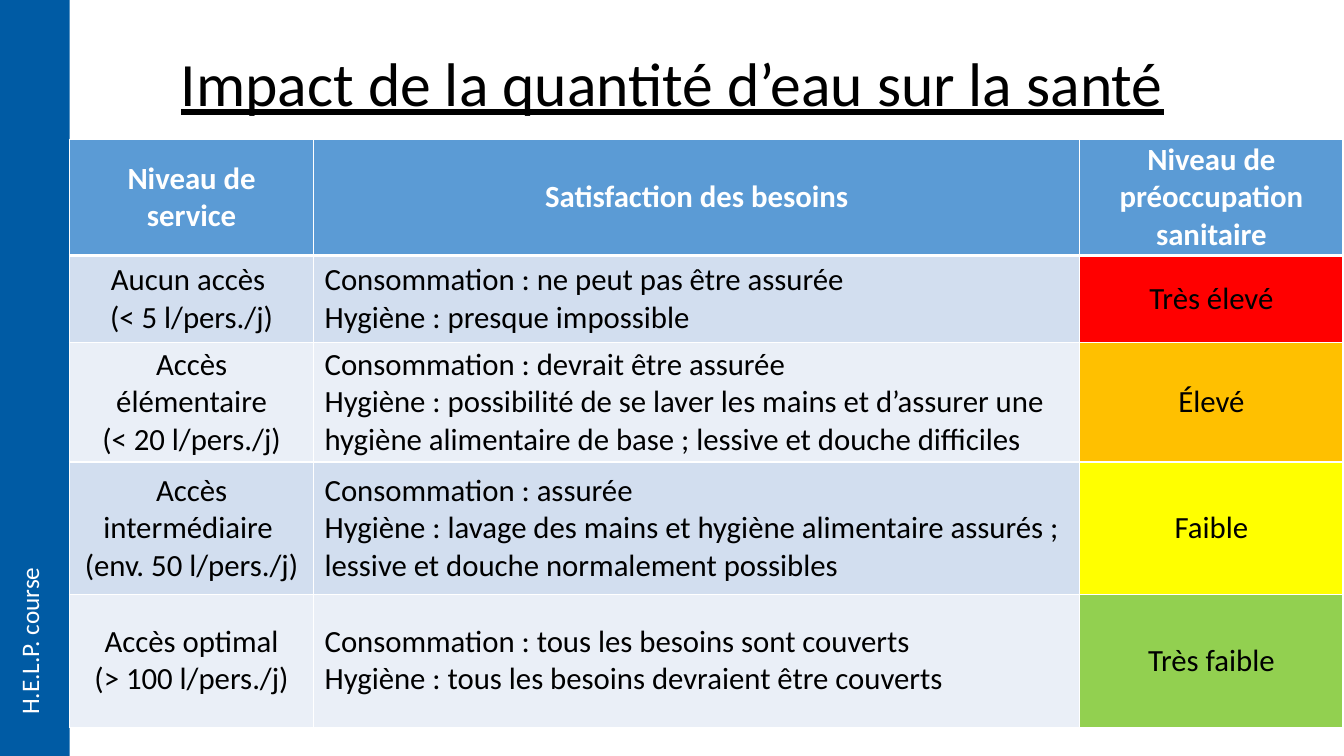
from lxml import etree
from pptx import Presentation
from pptx.dml.color import RGBColor
from pptx.enum.shapes import MSO_SHAPE
from pptx.enum.text import MSO_ANCHOR, MSO_AUTO_SIZE, PP_ALIGN
from pptx.oxml.ns import qn
from pptx.util import Inches, Pt

RECT = MSO_SHAPE.RECTANGLE
MIDDLE = MSO_ANCHOR.MIDDLE
LEFT, CENTER = PP_ALIGN.LEFT, PP_ALIGN.CENTER
GROW = MSO_AUTO_SIZE.SHAPE_TO_FIT_TEXT

FONT = "Calibri"
COLORS = {
    "white": "FFFFFF", "black": "000000", "side": "005BA4",
    "head": "5B9BD5", "dark": "D2DEEF", "light": "EAEFF7",
    "red": "FF0000", "orange": "FFC000", "yellow": "FFFF00",
    "green": "92D050",
}

COLS = [2.42, 7.6, 2.61]
ROWS = [0.86, 0.86, 1.19, 1.31, 1.32]
HEADS = ["Niveau de service", "Satisfaction des besoins",
         "Niveau de préoccupation sanitaire"]
# Service level, needs met, health concern, concern colour
LEVELS = [
    (["Aucun accès ", "(< 5 l/pers./j)"],
     ["Consommation : ne peut pas être assurée",
      "Hygiène : presque impossible"],
     "Très élevé", "red"),
    (["Accès élémentaire", "(< 20 l/pers./j)"],
     ["Consommation : devrait être assurée",
      "Hygiène : possibilité de se laver les mains et d’assurer une "
      "hygiène alimentaire de base ; lessive et douche difficiles"],
     "Élevé", "orange"),
    (["Accès intermédiaire ", "(env. 50 l/pers./j)"],
     ["Consommation : assurée",
      "Hygiène : lavage des mains et hygiène alimentaire assurés ; "
      "lessive et douche normalement possibles"],
     "Faible", "yellow"),
    (["Accès optimal", "(> 100 l/pers./j)"],
     ["Consommation : tous les besoins sont couverts",
      "Hygiène : tous les besoins devraient être couverts"],
     "Très faible", "green"),
]


def rgb(name):
    return RGBColor.from_string(COLORS[name])


def write(frame, lines, size, color, align=LEFT, bold=False, under=False):
    for i, line in enumerate(lines):
        para = frame.paragraphs[0] if i == 0 else frame.add_paragraph()
        para.alignment = align
        run = para.add_run()
        run.text = line
        font = run.font
        font.name, font.size = FONT, Pt(size)
        font.bold, font.underline = bold, under
        font.color.rgb = rgb(color)


def add_box(slide, left, top, width, height, wrap=True):
    box = slide.shapes.add_textbox(
        Inches(left), Inches(top), Inches(width), Inches(height))
    box.text_frame.word_wrap = wrap
    return box.text_frame


def add_side(slide):
    bar = slide.shapes.add_shape(RECT, 0, 0, Inches(0.69), Inches(7.5))
    bar.shadow.inherit = False
    bar.fill.solid()
    bar.fill.fore_color.rgb = rgb("side")
    bar.line.fill.background()
    frame = add_box(slide, 0.09, 5.61, 0.5, 1.58, wrap=False)
    frame.auto_size = GROW
    frame._txBody.bodyPr.set("vert", "vert270")
    write(frame, ["H.E.L.P. course"], 18, "white")


def add_title(slide):
    frame = add_box(slide, 0.92, 0.4, 11.5, 0.91)
    frame.vertical_anchor = MIDDLE
    write(frame, ["Impact de la quantité d’eau sur la santé"], 44, "black",
          CENTER, under=True)
    frame.paragraphs[0].line_spacing = 0.9


def set_edges(cell, top, bottom):
    props = cell._tc.get_or_add_tcPr()
    edges = [("a:lnL", 1), ("a:lnR", 1), ("a:lnT", top), ("a:lnB", bottom)]
    for i, (tag, width) in enumerate(edges):
        line = etree.Element(qn(tag), w=str(Pt(width)))
        fill = etree.SubElement(line, qn("a:solidFill"))
        etree.SubElement(fill, qn("a:srgbClr"), val=COLORS["white"])
        props.insert(i, line)


def fill_cell(cell, lines, fill, align, head=False):
    cell.vertical_anchor = MIDDLE
    cell.margin_left = cell.margin_right = Inches(0.11)
    cell.margin_top = cell.margin_bottom = Inches(0.02)
    cell.fill.solid()
    cell.fill.fore_color.rgb = rgb(fill)
    write(cell.text_frame, lines, 22, "white" if head else "black",
          align, bold=head)


def add_levels(slide):
    table = slide.shapes.add_table(
        len(ROWS), len(COLS), Inches(0.69), Inches(1.38),
        Inches(sum(COLS)), Inches(sum(ROWS))).table
    for col, width in zip(table.columns, COLS):
        col.width = Inches(width)
    for row, height in zip(table.rows, ROWS):
        row.height = Inches(height)

    # Header row
    for c, head in enumerate(HEADS):
        fill_cell(table.cell(0, c), [head], "head", CENTER, head=True)

    # One row per service level
    for r, (level, needs, concern, color) in enumerate(LEVELS, 1):
        band = "dark" if r % 2 else "light"
        fill_cell(table.cell(r, 0), level, band, CENTER)
        fill_cell(table.cell(r, 1), needs, band, LEFT)
        fill_cell(table.cell(r, 2), [concern], color, CENTER)

    # White grid, thicker under the header
    for r in range(len(ROWS)):
        for c in range(len(COLS)):
            set_edges(table.cell(r, c), 3 if r == 1 else 1,
                      3 if r == 0 else 1)


def main():
    deck = Presentation()
    deck.slide_width, deck.slide_height = Inches(13.33), Inches(7.5)
    slide = deck.slides.add_slide(deck.slide_layouts[6])
    add_side(slide)
    add_levels(slide)
    add_title(slide)
    deck.save("out.pptx")


if __name__ == "__main__":
    main()
